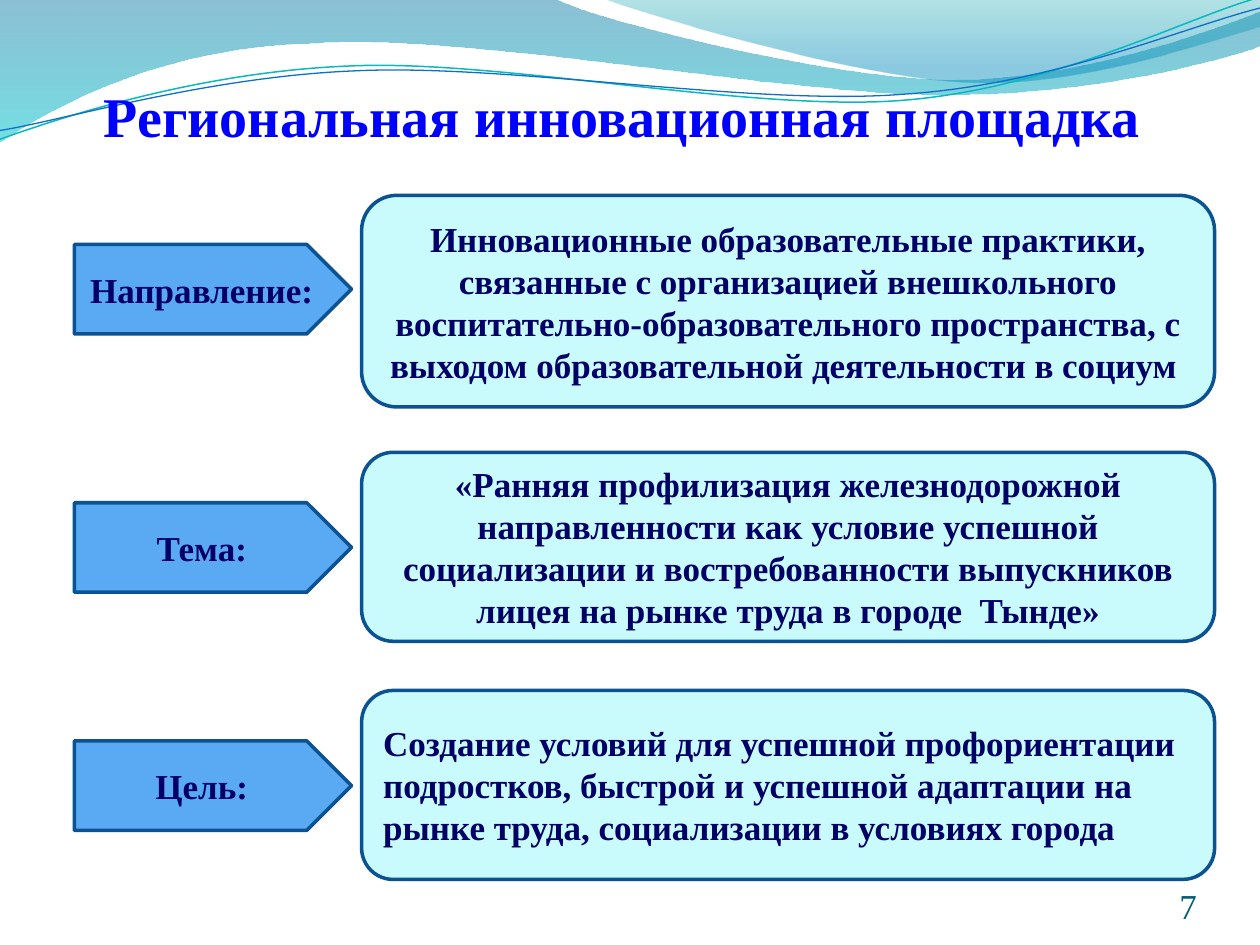
from lxml.etree import SubElement
from pptx import Presentation
from pptx.dml.color import RGBColor
from pptx.enum.shapes import MSO_SHAPE
from pptx.enum.text import MSO_ANCHOR, MSO_AUTO_SIZE, PP_ALIGN
from pptx.oxml.ns import qn
from pptx.util import Inches, Pt

COLORS = {
    "title": "0000FF",
    "text": "000066",
    "number": "045D75",
    "label": "59AAF2",
    "panel": "C9FAFC",
    "outline": "0B5292",
}
FONT = "Times New Roman"
LINE_ROTATION = 357.3

# Each wave: start point, then segments of one point (line) or three (cubic curve).
# Gradient stops: position, colour, opacity in percent.
FILLED_WAVES = [
    ((0, 0),
     [[(4.4, -0.01)],
      [(4.76, 0.17), (6.64, 0.63), (7.58, 0.63)],
      [(8.53, 0.63), (9.58, 0.26), (10, 0.09)],
      [(10.01, 0.36)],
      [(9.83, 0.44), (8.7, 0.76), (7.46, 0.75)],
      [(6.22, 0.75), (3.82, 0.28), (2.57, 0.34)],
      [(1.29, 0.36), (0.46, 0.83), (-0.01, 1.13)]],
     [(0, "0074A1", 45), (1, "00C6CF", 55)]),
    ((4.79, -0.01),
     [[(5.09, 0.11), (6.82, 0.62), (7.69, 0.65)],
      [(8.56, 0.69), (9.61, 0.32), (10, 0.21)],
      [(10, 0)]],
     [(0, "00A1A9", 30), (0.8, "008BBF", 45)]),
]
# Points of the line waves are given before rotation.
LINE_WAVES = [
    ((-0.02, 0.87),
     [[(0.47, 0.72), (1.58, 0.41), (2.78, 0.42)],
      [(3.96, 0.42), (5.91, 0.93), (7.12, 0.9)],
      [(8.32, 0.87), (9.4, 0.36), (10, 0.22)]],
     "0AB8BF", 0.85),
    ((-0.02, 0.8),
     [[(0.46, 0.75), (1.64, 0.45), (2.83, 0.46)],
      [(4.04, 0.46), (5.96, 0.89), (7.16, 0.85)],
      [(8.35, 0.83), (9.42, 0.42), (10.02, 0.3)]],
     "0F6FC6", 0.75),
]

# Label, label top, panel top, panel height, panel alignment, panel text
ROWS = [
    ("Направление:", 1.94, 1.55, 1.68, PP_ALIGN.CENTER,
     "Инновационные образовательные практики, связанные с организацией "
     "внешкольного воспитательно-образовательного пространства, с выходом "
     "образовательной деятельности в социум "),
    ("Тема:", 3.99, 3.59, 1.5, PP_ALIGN.CENTER,
     "«Ранняя профилизация железнодорожной направленности как условие успешной "
     "социализации и востребованности выпускников лицея на рынке труда "
     "в городе  Тынде»"),
    ("Цель:", 5.88, 5.48, 1.5, PP_ALIGN.LEFT,
     "Создание условий для успешной профориентации подростков, быстрой и "
     "успешной адаптации на рынке труда, социализации в условиях города"),
]


def rgb(value):
    return RGBColor.from_string(value)


def add_wave(page, start, segments, close):
    """Build the outline from its end points, then bend the curved segments."""
    builder = page.shapes.build_freeform(*map(Inches, start))
    builder.add_line_segments([tuple(map(Inches, segment[-1])) for segment in segments],
                              close=close)
    wave = builder.convert_to_shape()
    wave.shadow.inherit = False
    for line, segment in zip(list(wave._element.iter(qn("a:lnTo"))), segments):
        if len(segment) == 3:
            line.addprevious(curve := line.makeelement(qn("a:cubicBezTo")))
            for x, y in segment:
                SubElement(curve, qn("a:pt"), x=str(Inches(x) - wave.left),
                           y=str(Inches(y) - wave.top))
            line.getparent().remove(line)
    return wave


def add_filled_wave(page, start, segments, stops):
    wave = add_wave(page, start, segments, True)
    wave.line.fill.background()
    wave.fill.gradient()
    wave.fill.gradient_angle = 270
    for stop, (position, color, _) in zip(wave.fill.gradient_stops, stops):
        stop.position = position
        stop.color.rgb = rgb(color)
    for element, (_, _, opacity) in zip(wave._element.iter(qn("a:srgbClr")), stops):
        SubElement(element, qn("a:alpha"), val=str(opacity * 1000))


def add_line_wave(page, start, segments, color, width):
    wave = add_wave(page, start, segments, False)
    wave.rotation = LINE_ROTATION
    wave.fill.background()
    wave.line.color.rgb = rgb(color)
    wave.line.width = Pt(width)


def write_text(shape, text, color, size=20, bold=True, align=PP_ALIGN.CENTER, **frame_format):
    frame = shape.text_frame
    for name, value in {"word_wrap": True, **frame_format}.items():
        setattr(frame, name, value)
    para = frame.paragraphs[0]
    para.alignment = align
    span = para.add_run()
    span.text = text
    for name, value in {"name": FONT, "size": Pt(size), "bold": bold}.items():
        setattr(span.font, name, value)
    span.font.color.rgb = rgb(COLORS[color])


def add_text(page, place, text, color, **text_format):
    box = page.shapes.add_textbox(*map(Inches, place))
    write_text(box, text, color, **text_format)


def add_block(page, kind, place, fill, text, align=PP_ALIGN.CENTER):
    block = page.shapes.add_shape(kind, *map(Inches, place))
    block.shadow.inherit = False
    block.fill.solid()
    block.fill.fore_color.rgb = rgb(COLORS[fill])
    block.line.color.rgb = rgb(COLORS["outline"])
    block.line.width = Pt(2)
    write_text(block, text, "text", align=align, vertical_anchor=MSO_ANCHOR.MIDDLE)


def main():
    deck = Presentation()
    deck.slide_width, deck.slide_height = Inches(10), Inches(7.5)
    page = deck.slides.add_slide(deck.slide_layouts[6])

    for wave in FILLED_WAVES:
        add_filled_wave(page, *wave)
    for wave in LINE_WAVES:
        add_line_wave(page, *wave)

    add_text(page, (8.67, 6.95, 0.83, 0.4), "7", "number", bold=False,
             align=PP_ALIGN.RIGHT, vertical_anchor=MSO_ANCHOR.BOTTOM,
             margin_left=0, margin_top=0, margin_right=0, margin_bottom=0)
    add_text(page, (0.35, 0.6, 9.29, 0.64), "Региональная инновационная площадка ",
             "title", size=32, auto_size=MSO_AUTO_SIZE.SHAPE_TO_FIT_TEXT)
    for label, label_top, top, height, align, text in ROWS:
        add_block(page, MSO_SHAPE.PENTAGON, (0.59, label_top, 2.2, 0.71), "label", label)
        add_block(page, MSO_SHAPE.ROUNDED_RECTANGLE, (2.87, top, 6.77, height),
                  "panel", text, align)

    deck.save("out.pptx")


if __name__ == "__main__":
    main()
